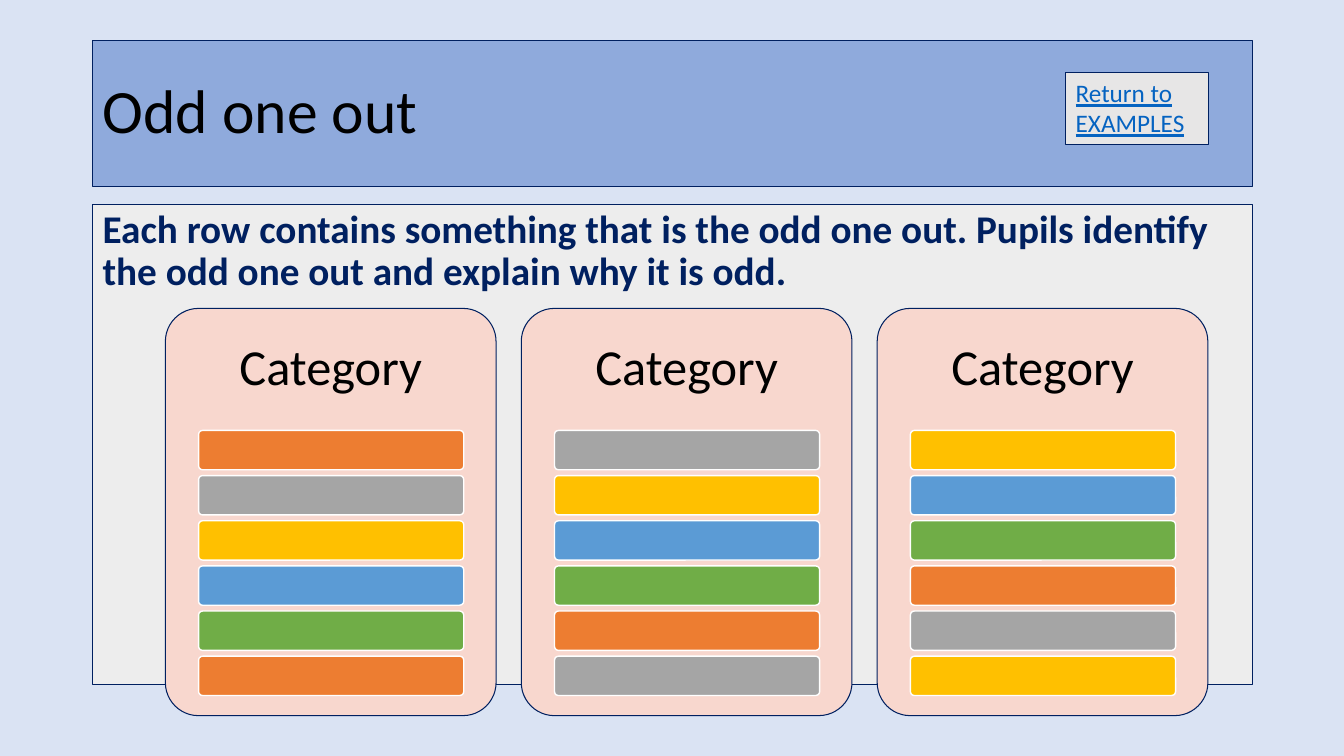
from dataclasses import dataclass

from pptx import Presentation
from pptx.dml.color import RGBColor
from pptx.enum.shapes import MSO_SHAPE
from pptx.enum.text import MSO_ANCHOR, MSO_AUTO_SIZE, PP_ALIGN
from pptx.shapes.base import BaseShape
from pptx.shapes.group import GroupShape
from pptx.util import Inches, Pt

COLORS = {
    "background": "DAE3F3",
    "title": "8FAADC",
    "body": "EDEDED",
    "button": "E7E6E6",
    "card": "F8D7CE",
    "navy": "002060",
    "link": "0563C1",
    "black": "000000",
    "white": "FFFFFF",
    "orange": "ED7D31",
    "gray": "A5A5A5",
    "yellow": "FFC000",
    "blue": "5B9BD5",
    "green": "70AD47",
}
BAR_CYCLE = ["orange", "gray", "yellow", "blue", "green"]
BARS_PER_CARD = 6
BAR_PITCH = 0.448
CARD_PITCH = 3.53


@dataclass(frozen=True)
class Box:
    left: float
    top: float
    width: float
    height: float

    def shifted(self, right: float = 0, down: float = 0) -> "Box":
        return Box(self.left + right, self.top + down, self.width, self.height)

    def lengths(self) -> list[int]:
        return [Inches(value) for value in (self.left, self.top, self.width, self.height)]


@dataclass(frozen=True)
class Card:
    heading: str
    first_color: int


TITLE_BOX = Box(0.92, 0.4, 11.5, 1.45)
BODY_BOX = Box(0.92, 2.03, 11.5, 4.76)
BUTTON_BOX = Box(10.57, 0.72, 1.42, 0.71)
CARD_BOX = Box(1.64, 3.06, 3.28, 4.04)
HEADING_BOX = Box(1.64, 3.06, 3.28, 1.21)
BAR_BOX = Box(1.97, 4.27, 2.63, 0.39)
CARDS = [Card("Category", 0), Card("Category", 1), Card("Category", 2)]


def rgb(name: str) -> RGBColor:
    return RGBColor.from_string(COLORS[name])


def paint(shape: BaseShape, fill: str, line: str = "navy", weight: float = 0.75) -> None:
    shape.fill.solid()
    shape.fill.fore_color.rgb = rgb(fill)
    shape.line.color.rgb = rgb(line)
    shape.line.width = Pt(weight)


def write(
    shape: BaseShape,
    text: str,
    *,
    size: float,
    color: str = "black",
    bold: bool = False,
    underline: bool = False,
    align: PP_ALIGN = PP_ALIGN.LEFT,
    anchor: MSO_ANCHOR = MSO_ANCHOR.TOP,
    line_spacing: float = 0.9,
    margin: float | None = None,
) -> None:
    frame = shape.text_frame
    frame.word_wrap = True
    frame.auto_size = MSO_AUTO_SIZE.NONE
    frame.vertical_anchor = anchor
    if margin is not None:
        frame.margin_left = frame.margin_right = Inches(margin)
        frame.margin_top = frame.margin_bottom = Inches(margin)
    paragraph = frame.paragraphs[0]
    paragraph.alignment = align
    paragraph.line_spacing = line_spacing
    run = paragraph.add_run()
    run.text = text
    run.font.name = "Calibri"
    run.font.size = Pt(size)
    run.font.bold = bold
    run.font.underline = underline
    run.font.color.rgb = rgb(color)


def add_rounded(group: GroupShape, box: Box) -> BaseShape:
    shape = group.shapes.add_shape(MSO_SHAPE.ROUNDED_RECTANGLE, *box.lengths())
    shape.adjustments[0] = 0.1
    shape.shadow.inherit = False
    return shape


def add_card(group: GroupShape, card: Card, offset: float) -> None:
    """Draw a headed card whose bars step through the colour cycle."""
    paint(add_rounded(group, CARD_BOX.shifted(offset)), "card")
    heading = group.shapes.add_textbox(*HEADING_BOX.shifted(offset).lengths())
    write(heading, card.heading, size=36, align=PP_ALIGN.CENTER,
          anchor=MSO_ANCHOR.MIDDLE, margin=0.15)
    for row in range(BARS_PER_CARD):
        bar = add_rounded(group, BAR_BOX.shifted(offset, row * BAR_PITCH))
        color = BAR_CYCLE[(card.first_color + row) % len(BAR_CYCLE)]
        paint(bar, color, line="white", weight=1)


def main() -> None:
    presentation = Presentation()
    presentation.slide_width = Inches(13.33)
    presentation.slide_height = Inches(7.5)
    slide = presentation.slides.add_slide(presentation.slide_layouts[5])
    slide.background.fill.solid()
    slide.background.fill.fore_color.rgb = rgb("background")

    title = slide.shapes.title
    title.left, title.top, title.width, title.height = TITLE_BOX.lengths()
    paint(title, "title")
    write(title, "Odd one out", size=44, anchor=MSO_ANCHOR.MIDDLE)

    body = slide.shapes.add_textbox(*BODY_BOX.lengths())
    paint(body, "body")
    write(body, "Each row contains something that is the odd one out. "
          "Pupils identify the odd one out and explain why it is odd.",
          size=28, color="navy", bold=True)

    button = slide.shapes.add_textbox(*BUTTON_BOX.lengths())
    paint(button, "button")
    write(button, "Return to EXAMPLES", size=18, color="link",
          underline=True, line_spacing=1.0)

    cards_group = slide.shapes.add_group_shape()
    for column, card in enumerate(CARDS):
        add_card(cards_group, card, column * CARD_PITCH)

    presentation.save("out.pptx")


if __name__ == "__main__":
    main()
